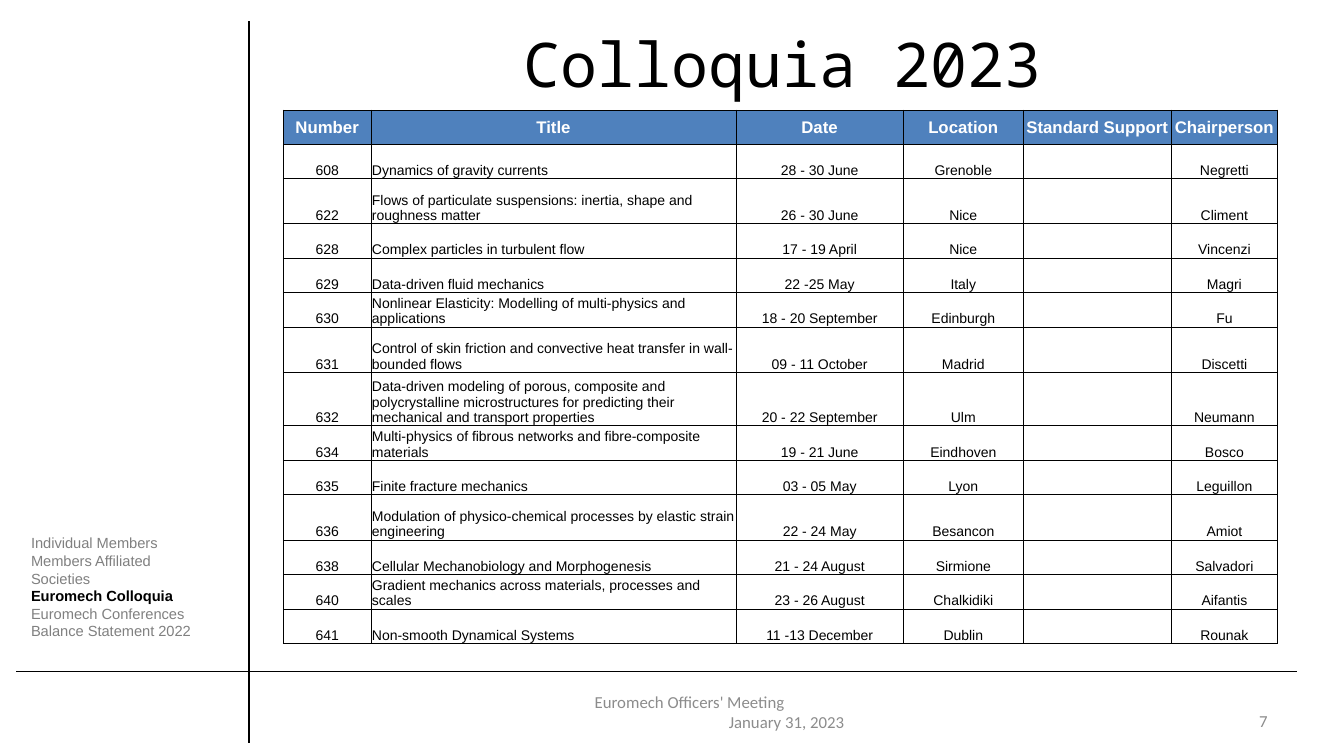
import dataclasses

import lxml.etree
import pptx
import pptx.dml.color
import pptx.enum.shapes
import pptx.enum.text
import pptx.oxml.ns
import pptx.util

Inches = pptx.util.Inches
Pt = pptx.util.Pt
Align = pptx.enum.text.PP_ALIGN
Anchor = pptx.enum.text.MSO_ANCHOR
qname = pptx.oxml.ns.qn

COLORS = {"ink": "000000", "menu": "808080", "foot": "8C8C8C", "head": "4F81BD", "white": "FFFFFF"}


@dataclasses.dataclass
class Line:
    text: str
    color: str = "ink"
    bold: bool = False
    indent: float = 0


@dataclasses.dataclass
class Label:
    box: tuple[float, float, float, float]
    lines: list[Line]
    font: str
    size: float
    align: Align = Align.LEFT
    anchor: Anchor = Anchor.MIDDLE


@dataclasses.dataclass
class Event:
    number: str
    title: str
    date: str
    place: str
    chair: str
    height: float = 0.34


RULES = [(2.47, 0.21, 2.47, 7.37), (0.16, 6.66, 12.86, 6.66)]

LABELS = [
    Label((0.21, 5.25, 1.93, 1.16), [
        Line("Individual Members", "menu"),
        Line("Members Affiliated Societies", "menu"),
        Line("Euromech Colloquia", bold=True),
        Line("Euromech Conferences", "menu"),
        Line("Balance Statement 2022", "menu"),
    ], "Arial", 10.5, anchor=Anchor.TOP),
    Label((5.8, 6.86, 3.17, 0.4), [
        Line("Euromech Officers' Meeting", "foot"),
        Line("January 31, 2023", "foot", indent=1.33),
    ], "Calibri", 12),
    Label((9.56, 6.95, 3.11, 0.4), [Line("7", "foot")], "Calibri", 12, Align.RIGHT),
    Label((3.12, 0.16, 9.29, 0.93), [Line("Colloquia 2023")], "Noto Sans Mono", 44, Align.CENTER),
]

HEADS = ["Number", "Title", "Date", "Location", "Standard Support", "Chairperson"]
WIDTHS = [0.87, 3.62, 1.66, 1.19, 1.47, 1.05]
EVENTS = [
    Event("608", "Dynamics of gravity currents", "28 - 30 June", "Grenoble", "Negretti"),
    Event("622", "Flows of particulate suspensions: inertia, shape and roughness matter",
          "26 - 30 June", "Nice", "Climent", 0.45),
    Event("628", "Complex particles in turbulent flow", "17 - 19 April", "Nice", "Vincenzi"),
    Event("629", "Data-driven fluid mechanics", "22 -25 May", "Italy", "Magri"),
    Event("630", "Nonlinear Elasticity: Modelling of multi-physics and applications",
          "18 - 20 September", "Edinburgh", "Fu"),
    Event("631", "Control of skin friction and convective heat transfer in wall-bounded flows",
          "09 - 11 October", "Madrid", "Discetti", 0.45),
    Event("632", "Data-driven modeling of porous, composite and polycrystalline microstructures "
          "for predicting their mechanical and transport properties",
          "20 - 22 September", "Ulm", "Neumann", 0.53),
    Event("634", "Multi-physics of fibrous networks and fibre-composite materials",
          "19 - 21 June", "Eindhoven", "Bosco"),
    Event("635", "Finite fracture mechanics", "03 - 05 May", "Lyon", "Leguillon"),
    Event("636", "Modulation of physico-chemical processes by elastic strain engineering",
          "22 - 24 May", "Besancon", "Amiot", 0.45),
    Event("638", "Cellular Mechanobiology and Morphogenesis", "21 - 24 August", "Sirmione", "Salvadori"),
    Event("640", "Gradient mechanics across materials, processes and scales",
          "23 - 26 August", "Chalkidiki", "Aifantis"),
    Event("641", "Non-smooth Dynamical Systems", "11 -13 December", "Dublin", "Rounak"),
]


def paint(color: str) -> pptx.dml.color.RGBColor:
    return pptx.dml.color.RGBColor.from_string(COLORS[color])


def style(para, font: str, size: float, color: str, bold: bool, align: Align) -> None:
    para.alignment = align
    para.font.name = font
    para.font.size = Pt(size)
    para.font.bold = bold
    para.font.color.rgb = paint(color)


def draw_rule(slide, ends: tuple[float, float, float, float]) -> None:
    rule = slide.shapes.add_connector(pptx.enum.shapes.MSO_CONNECTOR.STRAIGHT, *map(Inches, ends))
    rule.line.color.rgb = paint("ink")
    rule.line.width = Pt(1)
    lxml.etree.SubElement(rule._element.spPr, qname("a:effectLst"))


def draw_label(slide, label: Label) -> None:
    frame = slide.shapes.add_textbox(*map(Inches, label.box)).text_frame
    frame.word_wrap = True
    frame.vertical_anchor = label.anchor
    for index, line in enumerate(label.lines):
        para = frame.add_paragraph() if index else frame.paragraphs[0]
        para.text = line.text
        if line.indent:
            props = para._p.get_or_add_pPr()
            props.set("marL", str(Inches(line.indent)))
            props.set("indent", "0")
        style(para, label.font, label.size, line.color, line.bold, label.align)


def add_edges(cell) -> None:
    props = cell._tc.get_or_add_tcPr()
    for side in ("lnL", "lnR", "lnT", "lnB"):
        edge = lxml.etree.SubElement(props, qname(f"a:{side}"), w=str(Pt(0.5)))
        fill = lxml.etree.SubElement(edge, qname("a:solidFill"))
        lxml.etree.SubElement(fill, qname("a:srgbClr"), val=COLORS["ink"])


def fill_cell(cell, text: str, head: bool, align: Align) -> None:
    cell.margin_left = cell.margin_right = cell.margin_top = Inches(0.01)
    cell.margin_bottom = 0
    cell.vertical_anchor = Anchor.MIDDLE if head else Anchor.BOTTOM
    add_edges(cell)
    if head:
        cell.fill.solid()
        cell.fill.fore_color.rgb = paint("head")
    else:
        cell.fill.background()
    para = cell.text_frame.paragraphs[0]
    para.text = text
    style(para, "Arial", 12 if head else 10, "white" if head else "ink", head, align)


def draw_table(slide) -> None:
    rows = [HEADS] + [[e.number, e.title, e.date, e.place, "", e.chair] for e in EVENTS]
    heights = [0.34] + [e.height for e in EVENTS]
    box = map(Inches, (2.81, 1.09, sum(WIDTHS), sum(heights)))
    table = slide.shapes.add_table(len(rows), len(HEADS), *box).table
    table.horz_banding = False
    for column, width in zip(table.columns, WIDTHS):
        column.width = Inches(width)
    for r, (texts, height) in enumerate(zip(rows, heights)):
        table.rows[r].height = Inches(height)
        for c, text in enumerate(texts):
            align = Align.LEFT if r and c == 1 else Align.CENTER
            fill_cell(table.cell(r, c), text, r == 0, align)


def main() -> None:
    deck = pptx.Presentation()
    deck.slide_width = Inches(13.33)
    deck.slide_height = Inches(7.5)
    slide = deck.slides.add_slide(deck.slide_layouts[6])
    for rule in RULES:
        draw_rule(slide, rule)
    for label in LABELS:
        draw_label(slide, label)
    draw_table(slide)
    deck.save("out.pptx")


if __name__ == "__main__":
    main()
